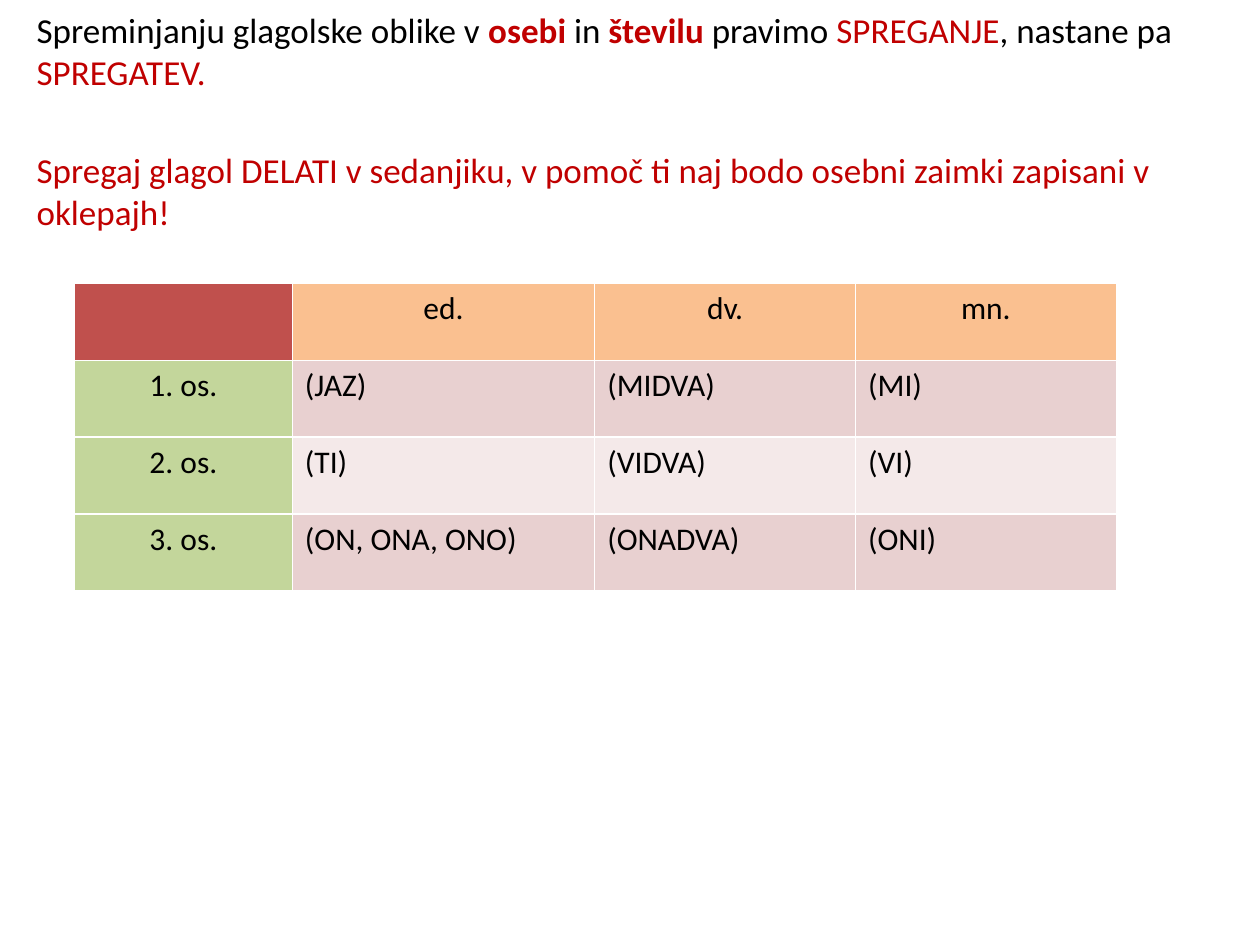
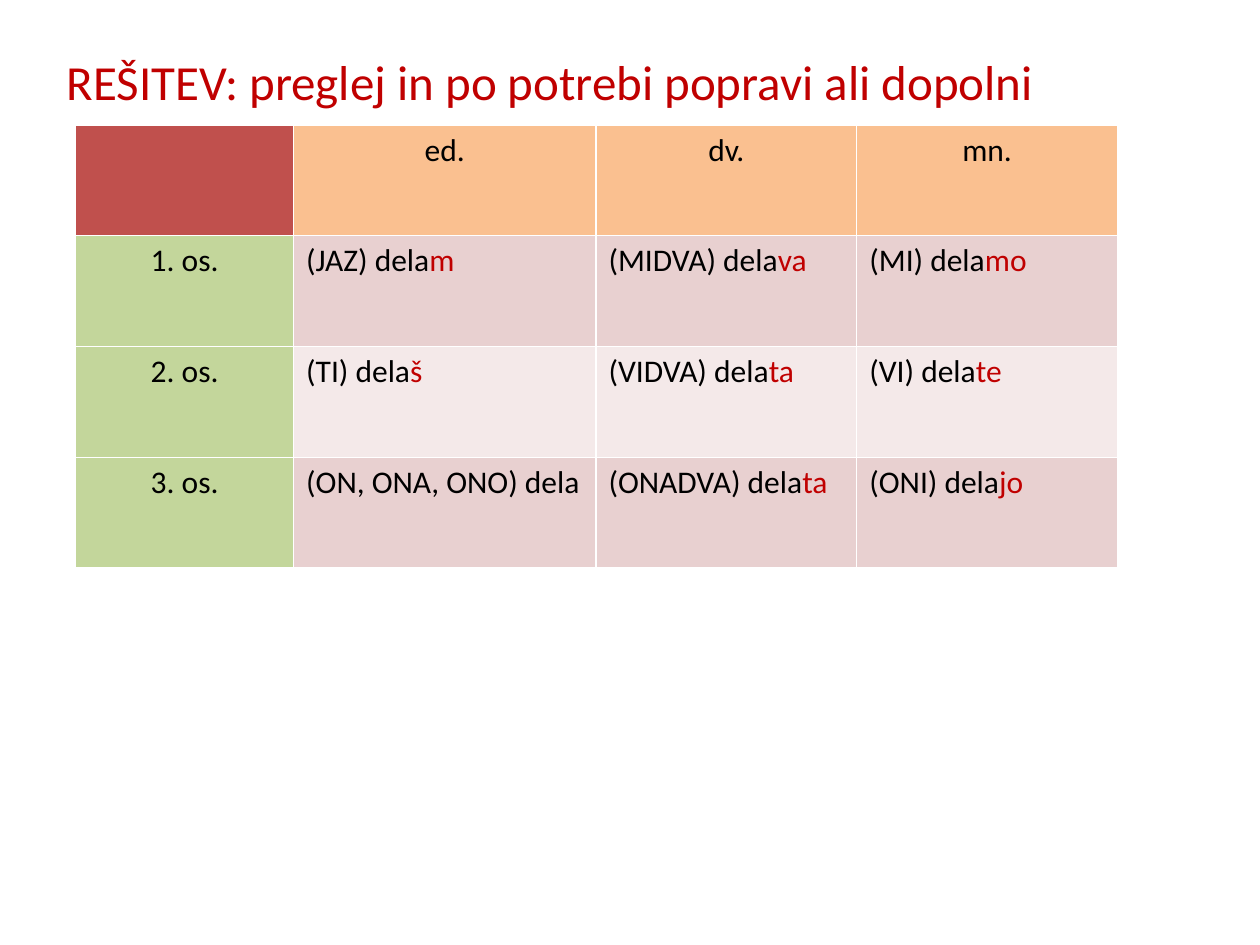
from lxml import etree
from pptx import Presentation
from pptx.dml.color import RGBColor
from pptx.enum.text import MSO_AUTO_SIZE, PP_ALIGN
from pptx.oxml.ns import qn
from pptx.util import Inches, Pt

BLACK = RGBColor(0x00, 0x00, 0x00)
RED = RGBColor(0xC0, 0x00, 0x00)
CORNER = RGBColor(0xC0, 0x50, 0x4D)
NUMBER_FILL = RGBColor(0xFA, 0xC0, 0x90)
PERSON_FILL = RGBColor(0xC3, 0xD6, 0x9B)
BAND_FILLS = [RGBColor(0xF4, 0xE9, 0xE9), RGBColor(0xE8, 0xD0, 0xD0)]
FONT = "Calibri"
COLUMNS = [1.73, 2.4, 2.07, 2.07]
NUMBERS = ["ed.", "dv.", "mn."]
PERSONS = ["1. os.", "2. os.", "3. os."]
PRONOUNS = [
    ["(JAZ)", "(MIDVA)", "(MI)"],
    ["(TI)", "(VIDVA)", "(VI)"],
    ["(ON, ONA, ONO)", "(ONADVA)", "(ONI)"],
]
ENDINGS = [["m", "va", "mo"], ["š", "ta", "te"], ["", "ta", "jo"]]
STEM = " dela"

pages = [
    {
        "body": (0.19, 0.02, 9.81, 4.95),
        "size": 20,
        "paragraphs": [
            [
                ("Spreminjanju glagolske oblike v ", BLACK, False),
                ("osebi", RED, True),
                (" in ", BLACK, False),
                ("številu", RED, True),
                (" pravimo ", BLACK, False),
                ("SPREGANJE", RED, False),
                (", nastane pa ", BLACK, False),
                ("SPREGATEV.", RED, False),
            ],
            [("Spregaj glagol DELATI v sedanjiku, v pomoč ti naj bodo "
              "osebni zaimki zapisani v oklepajh!", RED, False)],
        ],
        "table": (0.59, 2.25),
        "row": 0.61,
        "solved": False,
    },
    {
        "body": (0.43, 0.36, 8.44, 4.95),
        "size": 28,
        "paragraphs": [[("REŠITEV: preglej in po potrebi popravi ali dopolni", RED, False)]],
        "table": (0.6, 0.99),
        "row": 0.88,
        "solved": True,
    },
]


def add_span(para, text, size, color, bold=False):
    span = para.add_run()
    span.text = text
    span.font.name = FONT
    span.font.size = Pt(size)
    span.font.bold = bold
    span.font.color.rgb = color


deck = Presentation()
deck.slide_width, deck.slide_height = Inches(10), Inches(7.5)

for content in pages:
    page = deck.slides.add_slide(deck.slide_layouts[1])
    title = page.shapes.title
    title.element.getparent().remove(title.element)

    body = page.placeholders[1]
    body.left, body.top, body.width, body.height = map(Inches, content["body"])
    frame = body.text_frame
    frame.auto_size = MSO_AUTO_SIZE.NONE
    for index, spans in enumerate(content["paragraphs"]):
        para = frame.add_paragraph() if index else frame.paragraphs[0]
        if index:
            para.space_before = Pt(32)
        props = para._p.get_or_add_pPr()
        props.set("marL", "0")
        props.set("indent", "0")
        etree.SubElement(props, qn("a:buNone"))
        for text, color, bold in spans:
            add_span(para, text, content["size"], color, bold)

    left, top = content["table"]
    rows = len(PERSONS) + 1
    table = page.shapes.add_table(
        rows, len(COLUMNS), Inches(left), Inches(top),
        Inches(sum(COLUMNS)), Inches(rows * content["row"])).table
    for column, width in zip(table.columns, COLUMNS):
        column.width = Inches(width)

    for r in range(rows):
        for c in range(len(COLUMNS)):
            cell = table.cell(r, c)
            para = cell.text_frame.paragraphs[0]
            ending = ""
            if r and c:
                fill = BAND_FILLS[r % 2]
                text = PRONOUNS[r - 1][c - 1]
                if content["solved"]:
                    text += STEM
                    ending = ENDINGS[r - 1][c - 1]
            else:
                para.alignment = PP_ALIGN.CENTER
                if r:
                    fill, text = PERSON_FILL, PERSONS[r - 1]
                elif c:
                    fill, text = NUMBER_FILL, NUMBERS[c - 1]
                else:
                    fill, text = CORNER, ""
            cell.fill.solid()
            cell.fill.fore_color.rgb = fill
            if text:
                add_span(para, text, 18, BLACK)
            if ending:
                add_span(para, ending, 18, RED)

deck.save("out.pptx")
